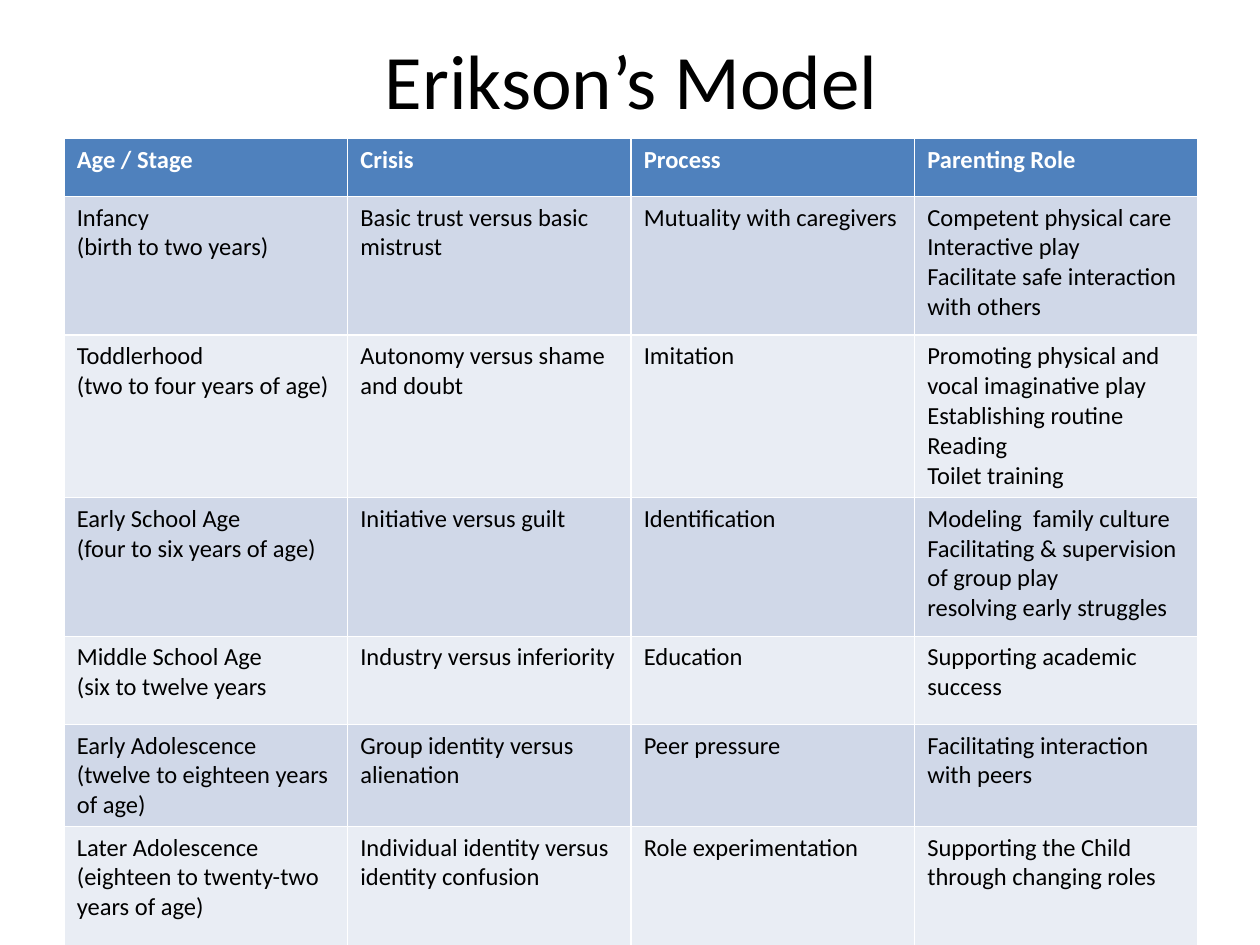
"""Build a slide with a table of Erikson's stages of development."""
from dataclasses import dataclass

from pptx import Presentation
from pptx.dml.color import RGBColor as Rgb
from pptx.enum.text import MSO_ANCHOR as Anchor, PP_ALIGN as Align
from pptx.util import Inches, Pt

FONT = "Calibri"
WHITE, BLACK, HEADER = "FFFFFF", "000000", "4F81BD"
BANDS = ("D0D8E8", "E9EDF4")
LEFT, WIDTH = 0.51, 9
TABLE_TOP, HEADER_HEIGHT = 1.1, 0.46
HEADINGS = ("Age / Stage", "Crisis", "Process", "Parenting Role")


@dataclass(frozen=True)
class Stage:
    """One row of the model; a line break starts a new paragraph."""
    height: float
    age: str
    crisis: str
    process: str
    role: str


STAGES = (
    Stage(1.1, "Infancy\n(birth to two years)",
          "Basic trust versus basic mistrust", "Mutuality with caregivers",
          "Competent physical care\nInteractive play\n"
          "Facilitate safe interaction with others"),
    Stage(1.29, "Toddlerhood\n(two to four years of age)",
          "Autonomy versus shame and doubt", "Imitation",
          "Promoting physical and vocal imaginative play\n"
          "Establishing routine\nReading\nToilet training"),
    Stage(1.1, "Early School Age\n(four to six years of age)",
          "Initiative versus guilt", "Identification",
          "Modeling  family culture Facilitating & supervision of group play\n"
          "resolving early struggles"),
    Stage(0.7, "Middle School Age\n(six to twelve years",
          "Industry versus inferiority", "Education",
          "Supporting academic success"),
    Stage(0.8, "Early Adolescence\n(twelve to eighteen years of age)",
          "Group identity versus alienation", "Peer pressure",
          "Facilitating interaction with peers"),
    Stage(0.95, "Later Adolescence\n(eighteen to twenty-two years of age)",
          "Individual identity versus identity confusion",
          "Role experimentation",
          "Supporting the Child through changing roles"),
)


def color(value: str) -> Rgb:
    """Turn a hex string into a colour."""
    return Rgb.from_string(value)


def style_text(frame, size: float, ink: str, bold: bool = False) -> None:
    """Set the font of every paragraph in a text frame."""
    for para in frame.paragraphs:
        font = para.font
        font.name, font.size, font.bold = FONT, Pt(size), bold
        font.color.rgb = color(ink)


def add_title(slide, text: str) -> None:
    """Fill and place the title placeholder."""
    title = slide.shapes.title
    title.left, title.top = Inches(LEFT), 0
    title.width, title.height = Inches(WIDTH), Inches(1.25)
    frame = title.text_frame
    frame.text, frame.vertical_anchor = text, Anchor.MIDDLE
    frame.paragraphs[0].alignment = Align.CENTER
    style_text(frame, 44, BLACK)


def fill_row(row, height: float, texts: tuple[str, ...], fill: str,
             ink: str, bold: bool = False) -> None:
    """Write and colour the cells of one table row."""
    row.height = Inches(height)
    for cell, text in zip(row.cells, texts):
        cell.text = text
        cell.fill.solid()
        cell.fill.fore_color.rgb = color(fill)
        style_text(cell.text_frame, 14, ink, bold)


def add_stage_table(slide) -> None:
    """Add the header row and one banded row for each stage."""
    height = HEADER_HEIGHT + sum(stage.height for stage in STAGES)
    table = slide.shapes.add_table(
        len(STAGES) + 1, len(HEADINGS), Inches(LEFT), Inches(TABLE_TOP),
        Inches(WIDTH), Inches(height)).table
    fill_row(table.rows[0], HEADER_HEIGHT, HEADINGS, HEADER, WHITE, True)
    for index, stage in enumerate(STAGES):
        texts = (stage.age, stage.crisis, stage.process, stage.role)
        fill_row(table.rows[index + 1], stage.height, texts,
                 BANDS[index % 2], BLACK)


def main() -> None:
    """Build and save the deck."""
    deck = Presentation()
    deck.slide_width, deck.slide_height = Inches(10), Inches(7.5)
    slide = deck.slides.add_slide(deck.slide_layouts[5])
    add_title(slide, "Erikson’s Model")
    add_stage_table(slide)
    deck.save("out.pptx")


if __name__ == "__main__":
    main()
